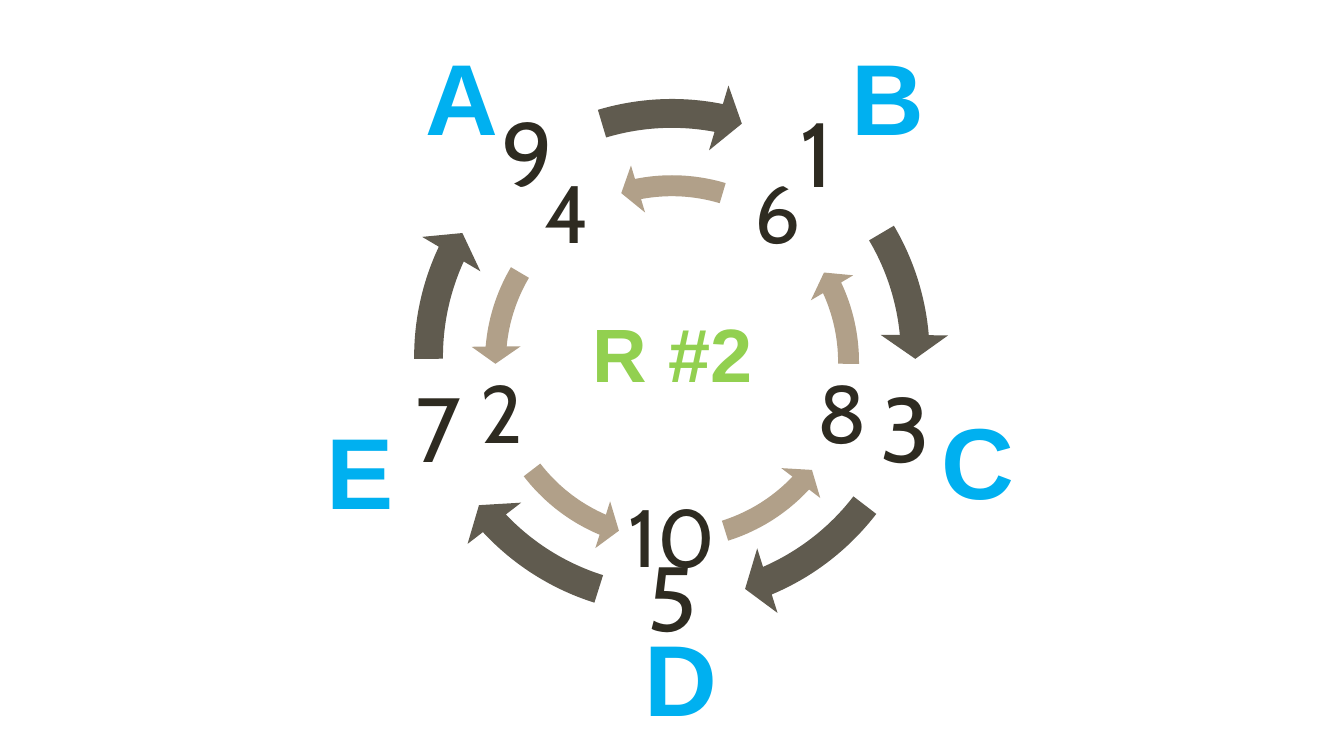
import math

import pptx
import pptx.dml.color
import pptx.enum.shapes
import pptx.enum.text
import pptx.oxml
import pptx.oxml.ns
import pptx.util

Pt = pptx.util.Pt
SHAPES = pptx.enum.shapes.MSO_SHAPE
ALIGN = pptx.enum.text.PP_ALIGN
ANCHOR = pptx.enum.text.MSO_ANCHOR
AUTO_SIZE = pptx.enum.text.MSO_AUTO_SIZE

COLORS = {
    "ink": "2E2B21",
    "outer": "605B4F",
    "inner": "B1A089",
    "letter": "00B0F0",
    "round": "92D050",
    "outline": "A9A57C",
}


class RingSlide:
    number_font = "Cabin"
    label_font = "Arial"

    def __init__(self, prs):
        self.s = prs.slides.add_slide(prs.slide_layouts[6])

    def color(self, name):
        return pptx.dml.color.RGBColor.from_string(COLORS[name])

    def text(self, text, x, y, w, h, size, font, color):
        sp = self.s.shapes.add_textbox(Pt(x), Pt(y), Pt(w), Pt(h))
        tf = sp.text_frame
        tf.word_wrap = True
        tf.text = text
        p = tf.paragraphs[0]
        r = p.runs[0]
        r.font.size = Pt(size)
        r.font.name = font
        r.font.color.rgb = self.color(color)
        return tf, p, r

    def number(self, text, cx, cy, side, size, inset):
        tf, p, r = self.text(text, cx - side / 2, cy - side / 2, side, side,
                             size, self.number_font, "ink")
        tf.vertical_anchor = ANCHOR.MIDDLE
        tf.margin_left = tf.margin_right = Pt(inset)
        tf.margin_top = tf.margin_bottom = Pt(inset)
        p.alignment = ALIGN.CENTER
        p.line_spacing = 0.9
        p.space_after = Pt(0.35 * size)

    def arrow(self, shape, cx, cy, side, head, tail, color):
        sp = self.s.shapes.add_shape(shape, Pt(cx - side / 2), Pt(cy - side / 2),
                                     Pt(side), Pt(side))
        sp.shadow.inherit = False
        sp.fill.solid()
        sp.fill.fore_color.rgb = self.color(color)
        sp.line.fill.background()
        for i, value in enumerate((0.052, 3.36, head * 0.6, tail * 0.6, 0.061)):
            sp.adjustments[i] = value

    def label(self, text, x, y, w, h, size, color):
        tf, p, r = self.text(text, x, y, w, h, size, self.label_font, color)
        tf.auto_size = AUTO_SIZE.SHAPE_TO_FIT_TEXT
        r.font.bold = True
        ln = pptx.oxml.parse_xml(
            f'<a:ln {pptx.oxml.ns.nsdecls("a")} w="12700"><a:solidFill>'
            f'<a:srgbClr val="{COLORS["outline"]}"/></a:solidFill></a:ln>')
        r.font._element.insert(0, ln)

    def ring(self, steps, cx, cy, radius, start, turn, side, size, inset,
             shape, diameter, color):
        for i, (text, head, tail) in enumerate(steps):
            angle = math.radians(start + turn * i)
            self.number(text, cx + radius * math.cos(angle),
                        cy + radius * math.sin(angle), side, size, inset)
            self.arrow(shape, cx, cy, diameter, head, tail, color)


def main():
    prs = pptx.Presentation()
    prs.slide_width = Pt(960)
    prs.slide_height = Pt(540)
    slide = RingSlide(prs)

    outer_steps = [("1", 354.88, 329.44), ("3", 66.91, 37.56),
                   ("5", 136.84, 107.5), ("7", 204.96, 179.52),
                   ("9", 281.09, 253.31)]
    inner_steps = [("4", 185.11, 210.56), ("2", 113.09, 142.44),
                   ("10", 43.16, 72.51), ("8", 335.04, 0.49),
                   ("6", 258.91, 286.69)]
    slide.ring(outer_steps, 480, 254.9, 175.4, -54, 72, 105.8, 65, 6.5,
               SHAPES.CIRCULAR_ARROW, 396, "outer")
    slide.ring(inner_steps, 480, 258.8, 127.8, 234, -72, 76.3, 58, 5.8,
               SHAPES.LEFT_CIRCULAR_ARROW, 287.3, "inner")

    letters = [("A", 296.6, 20.9), ("B", 601.2, 20.9), ("C", 665.3, 281.5),
               ("D", 453.6, 436.3), ("E", 226.1, 288.7)]
    for letter, x, y in letters:
        slide.label(letter, x, y, 77.8, 94.3, 72, "letter")
    slide.label("R #2", 416.2, 216, 128.9, 72.7, 54, "round")

    prs.save("out.pptx")


if __name__ == "__main__":
    main()
